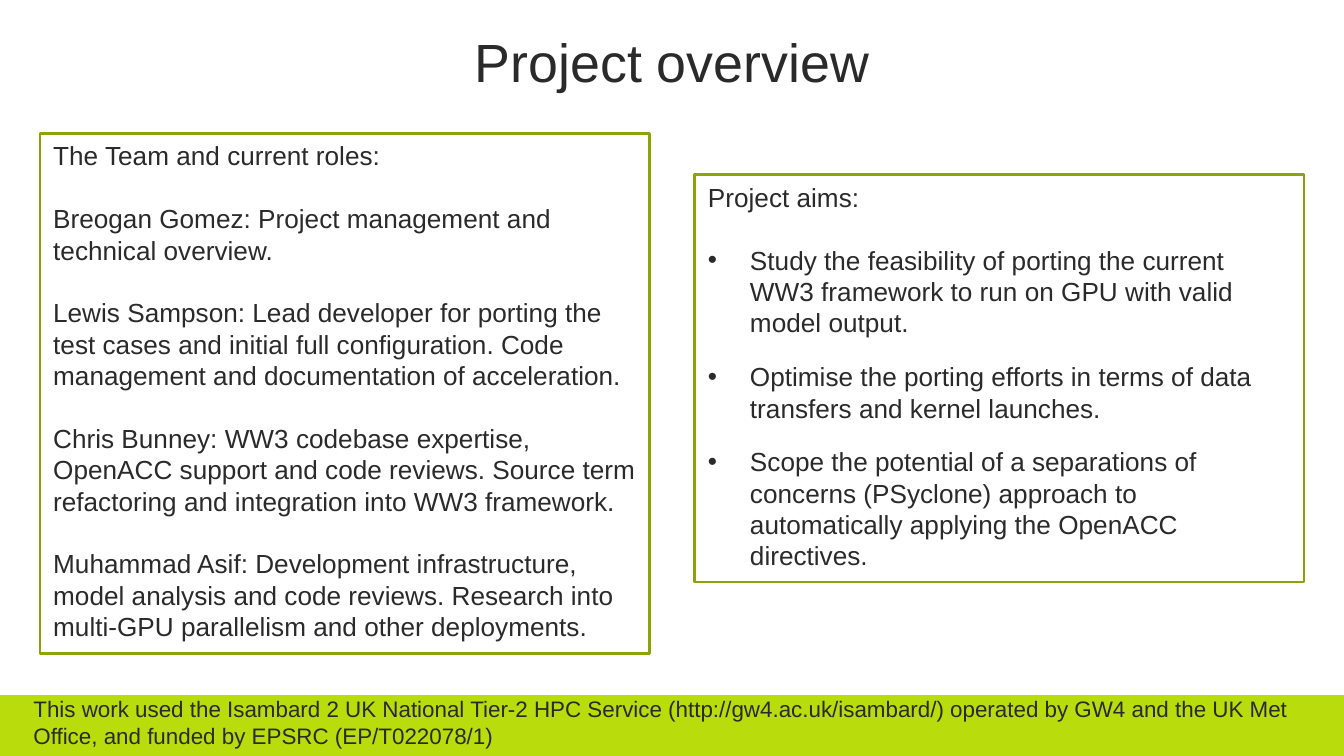
from lxml import etree
from pptx import Presentation
from pptx.dml.color import RGBColor
from pptx.enum import shapes, text
from pptx.oxml.ns import qn
from pptx.util import Pt

TITLE = "Project overview"
AIMS = {
    "heading": "Project aims:",
    "items": [
        "Study the feasibility of porting the current WW3 framework to run on GPU with valid model output.",
        "Optimise the porting efforts in terms of data transfers and kernel launches.",
        "Scope the potential of a separations of concerns (PSyclone) approach to automatically applying the OpenACC directives.",
    ],
    "box": (372.2, 93.6, 326.4, 218.2),
    "gap": 12,
    "bulleted": True,
}
TEAM = {
    "heading": "The Team and current roles:",
    "items": [
        "Breogan Gomez: Project management and technical overview.",
        "Lewis Sampson: Lead developer for porting the test cases and initial full configuration. Code management and documentation of acceleration.",
        "Chris Bunney: WW3 codebase expertise, OpenACC support and code reviews. Source term refactoring and integration into WW3 framework.",
        "Muhammad Asif: Development infrastructure, model analysis and code reviews. Research into multi-GPU parallelism and other deployments.",
    ],
    "box": (21.4, 71.4, 326.4, 278.6),
    "gap": 16.8,
    "bulleted": False,
}
FOOTER = (
    "This work used the Isambard 2 UK National Tier-2 HPC Service (http://gw4.ac.uk/isambard/) "
    "operated by GW4 and the UK Met Office, and funded by EPSRC (EP/T022078/1)"
)

FONT = "Arial"
DARK = RGBColor(0x2A, 0x2A, 0x2A)
LIME = RGBColor(0xB9, 0xDC, 0x0C)
OLIVE = RGBColor(0x8B, 0xA5, 0x09)
WIDTH, HEIGHT = 720, 405
BAND_TOP = 373
LINE_HEIGHT = 16.8
INDENT = 22.5


def points(box):
    return [Pt(value) for value in box]


def style(paragraph, size, alignment=text.PP_ALIGN.LEFT):
    paragraph.alignment = alignment
    paragraph.font.name = FONT
    paragraph.font.size = Pt(size)
    paragraph.font.color.rgb = DARK


def add_bullet(paragraph):
    properties = paragraph._p.get_or_add_pPr()
    properties.set("marL", str(Pt(INDENT)))
    properties.set("indent", str(-Pt(INDENT)))
    etree.SubElement(properties, qn("a:buFont")).set("typeface", FONT)
    etree.SubElement(properties, qn("a:buChar")).set("char", "•")


def add_rectangle(slide, box, line_color, line_width):
    shape = slide.shapes.add_shape(shapes.MSO_SHAPE.RECTANGLE, *points(box))
    shape.shadow.inherit = False
    shape.line.color.rgb = line_color
    shape.line.width = Pt(line_width)
    return shape


def add_panel(slide, panel):
    shape = add_rectangle(slide, panel["box"], OLIVE, 1.5)
    shape.fill.background()
    frame = shape.text_frame
    frame.word_wrap = True
    frame.vertical_anchor = text.MSO_ANCHOR.TOP
    lines = [panel["heading"], *panel["items"]]
    for index, line in enumerate(lines):
        paragraph = frame.add_paragraph() if index else frame.paragraphs[0]
        paragraph.text = line
        if index and panel["bulleted"]:
            add_bullet(paragraph)
        style(paragraph, 14)
        paragraph.line_spacing = Pt(LINE_HEIGHT)
        if index < len(lines) - 1:
            paragraph.space_after = Pt(panel["gap"] if index else LINE_HEIGHT)


def add_title(slide):
    title = slide.shapes.title
    title.left, title.top, title.width, title.height = points((242.4, 8.6, 235.2, 45.4))
    frame = title.text_frame
    frame.text = TITLE
    frame.word_wrap = True
    frame.auto_size = text.MSO_AUTO_SIZE.NONE
    frame.vertical_anchor = text.MSO_ANCHOR.BOTTOM
    style(frame.paragraphs[0], 28.8, text.PP_ALIGN.CENTER)
    frame.paragraphs[0].line_spacing = 0.9


def add_footer(slide):
    band = add_rectangle(slide, (0, BAND_TOP, WIDTH, HEIGHT - BAND_TOP), LIME, 1)
    band.fill.solid()
    band.fill.fore_color.rgb = LIME
    frame = slide.shapes.add_textbox(*points((10.8, 368.8, 709.2, 36))).text_frame
    frame.word_wrap = True
    frame.text = FOOTER
    style(frame.paragraphs[0], 12)


def main():
    presentation = Presentation()
    presentation.slide_width, presentation.slide_height = Pt(WIDTH), Pt(HEIGHT)
    slide = presentation.slides.add_slide(presentation.slide_layouts[5])
    add_title(slide)
    for panel in (AIMS, TEAM):
        add_panel(slide, panel)
    add_footer(slide)
    presentation.save("out.pptx")


if __name__ == "__main__":
    main()
